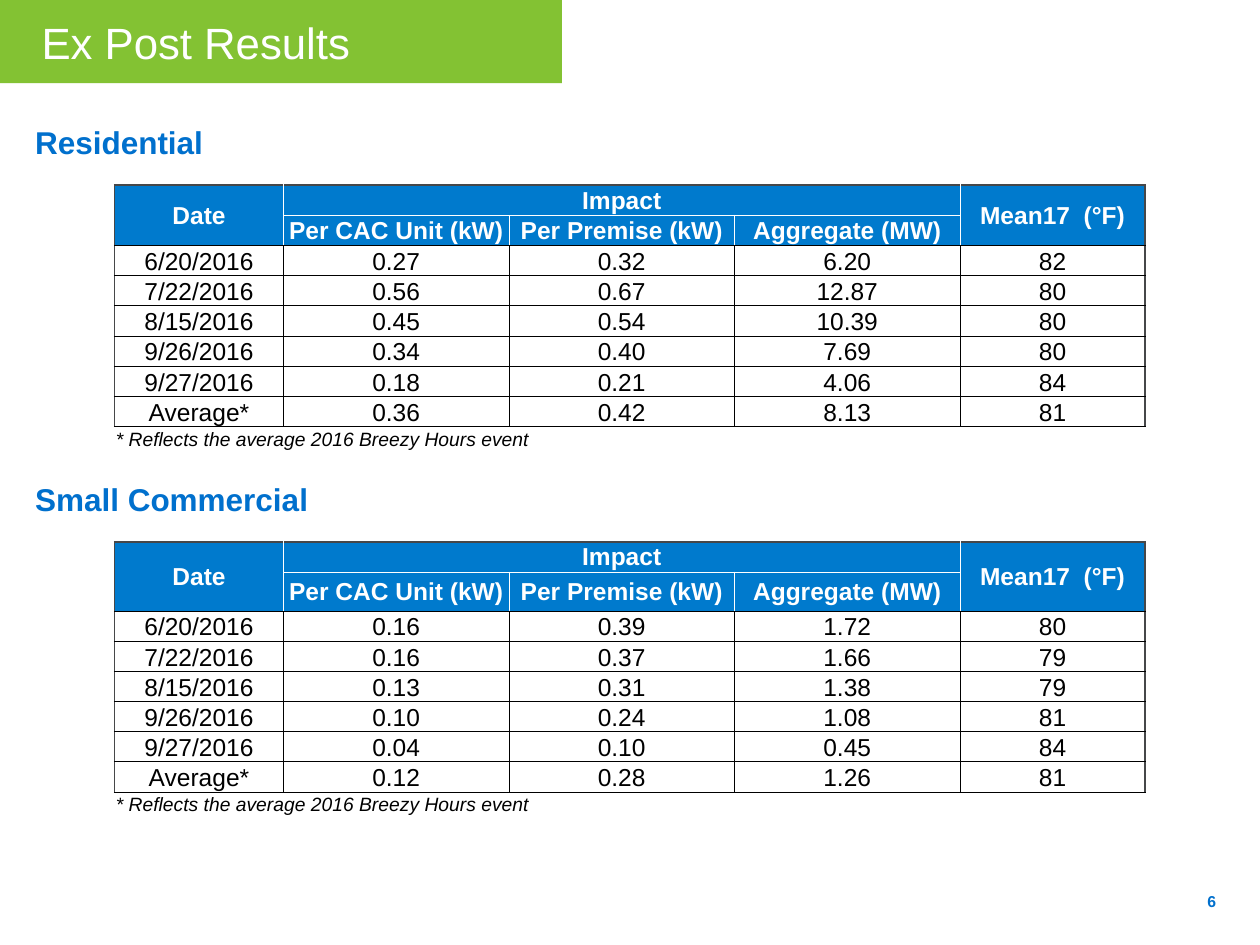
from lxml import etree
from pptx import Presentation
from pptx.dml.color import RGBColor
from pptx.enum.shapes import MSO_SHAPE
from pptx.enum.text import MSO_ANCHOR, PP_ALIGN
from pptx.oxml.ns import qn
from pptx.util import Inches, Pt

RECTANGLE = MSO_SHAPE.RECTANGLE
TOP, MIDDLE, BOTTOM = MSO_ANCHOR.TOP, MSO_ANCHOR.MIDDLE, MSO_ANCHOR.BOTTOM
LEFT, CENTER, RIGHT = PP_ALIGN.LEFT, PP_ALIGN.CENTER, PP_ALIGN.RIGHT

GREEN = RGBColor(0x77, 0xBC, 0x1F)
HEADING_BLUE = RGBColor(0x00, 0x70, 0xCD)
HEADER_BLUE = RGBColor(0x00, 0x7A, 0xCD)
GREY = RGBColor(0x46, 0x47, 0x49)
WHITE = RGBColor(0xFF, 0xFF, 0xFF)
BLACK = RGBColor(0x00, 0x00, 0x00)

# Cell borders: colour and width in points
OUTER, LIGHT, DARK = (GREY, 1), (WHITE, 0.5), (BLACK, 0.5)

COLUMN_WIDTHS = [1.34, 1.79, 1.79, 1.79, 1.47]
ROW_HEIGHT = 0.19
HEADER_ROWS = [
    ["Date", "Impact", "", "", "Mean17  (°F)"],
    ["", "Per CAC Unit (kW)", "Per Premise (kW)", "Aggregate (MW)", ""],
]
DATES = ["6/20/2016", "7/22/2016", "8/15/2016", "9/26/2016", "9/27/2016", "Average*"]
FOOTNOTE = "* Reflects the average 2016 Breezy Hours event"

RESIDENTIAL = [
    ["0.27", "0.32", "6.20", "82"],
    ["0.56", "0.67", "12.87", "80"],
    ["0.45", "0.54", "10.39", "80"],
    ["0.34", "0.40", "7.69", "80"],
    ["0.18", "0.21", "4.06", "84"],
    ["0.36", "0.42", "8.13", "81"],
]
SMALL_COMMERCIAL = [
    ["0.16", "0.39", "1.72", "80"],
    ["0.16", "0.37", "1.66", "79"],
    ["0.13", "0.31", "1.38", "79"],
    ["0.10", "0.24", "1.08", "81"],
    ["0.04", "0.10", "0.45", "84"],
    ["0.12", "0.28", "1.26", "81"],
]


def write_text(frame, text, size=14, color=BLACK, bold=False, italic=False, align=LEFT):
    paragraph = frame.paragraphs[0]
    paragraph.alignment = align
    run = paragraph.add_run()
    run.text = text
    font = run.font
    font.name, font.size = "Arial", Pt(size)
    font.bold, font.italic = bold, italic
    font.color.rgb = color


def set_borders(cell, **sides):
    """Draw the L, R, T and B borders; a side left out has no line."""
    properties = cell._tc.get_or_add_tcPr()
    for side in "LRTB":
        line = etree.SubElement(properties, qn(f"a:ln{side}"))
        if side in sides:
            color, width = sides[side]
            line.set("w", str(Pt(width)))
            fill = etree.SubElement(line, qn("a:solidFill"))
            etree.SubElement(fill, qn("a:srgbClr"), val=str(color))
        else:
            etree.SubElement(line, qn("a:noFill"))


class ReportSlide:
    def __init__(self, slide):
        self.slide = slide

    def banner(self, text, left, top, width, height):
        box = self.slide.shapes.add_shape(
            RECTANGLE, Inches(left), Inches(top), Inches(width), Inches(height))
        box.shadow.inherit = False
        box.line.fill.background()
        box.fill.solid()
        box.fill.fore_color.rgb = GREEN
        color = box._element.spPr.find(qn("a:solidFill")).find(qn("a:srgbClr"))
        etree.SubElement(color, qn("a:alpha"), val="91000")
        frame = box.text_frame
        frame.margin_left, frame.margin_right = Inches(0.35), Inches(0.18)
        frame.vertical_anchor = MIDDLE
        write_text(frame, text, size=25, color=WHITE)

    def label(self, text, left, top, width, height, anchor=TOP, **style):
        box = self.slide.shapes.add_textbox(
            Inches(left), Inches(top), Inches(width), Inches(height))
        frame = box.text_frame
        frame.word_wrap = True
        frame.vertical_anchor = anchor
        write_text(frame, text, color=HEADING_BLUE, bold=True, **style)

    def cell(self, cell, text, anchor, fill=None, borders=None, **style):
        cell.margin_left = cell.margin_right = Inches(0.01)
        cell.margin_top = Pt(0.4)
        cell.margin_bottom = 0
        cell.vertical_anchor = anchor
        set_borders(cell, **(borders or {}))
        if fill is None:
            cell.fill.background()
        else:
            cell.fill.solid()
            cell.fill.fore_color.rgb = fill
        if text:
            write_text(cell.text_frame, text, **style)

    def results_table(self, values, left, top, subheader_height=ROW_HEIGHT):
        rows = HEADER_ROWS + [[date, *row] for date, row in zip(DATES, values)]
        note_row, last = len(rows), len(COLUMN_WIDTHS) - 1
        heights = [ROW_HEIGHT] * (note_row + 1)
        heights[1] = subheader_height
        graphic = self.slide.shapes.add_table(
            note_row + 1, last + 1, Inches(left), Inches(top),
            Inches(sum(COLUMN_WIDTHS)), Inches(sum(heights)))
        table = graphic.table
        table.first_row = table.horz_banding = False
        for column, width in zip(table.columns, COLUMN_WIDTHS):
            column.width = Inches(width)
        for row, height in zip(table.rows, heights):
            row.height = Inches(height)

        # Spans: date, impact, temperature and footnote
        table.cell(0, 0).merge(table.cell(1, 0))
        table.cell(0, 1).merge(table.cell(0, last - 1))
        table.cell(0, last).merge(table.cell(1, last))
        table.cell(note_row, 0).merge(table.cell(note_row, last))

        # Header and values
        for r, row in enumerate(rows):
            header = r < len(HEADER_ROWS)
            inner = LIGHT if header else DARK
            for c, text in enumerate(row):
                borders = {
                    "L": OUTER if c == 0 else inner,
                    "R": OUTER if c == last else inner,
                    "T": OUTER if r == 0 else inner,
                    "B": LIGHT if r == 0 and 0 < c < last else DARK,
                }
                self.cell(table.cell(r, c), text, MIDDLE if header else BOTTOM,
                          fill=HEADER_BLUE if header else None, borders=borders,
                          color=WHITE if header else BLACK, bold=header, align=CENTER)

        # Footnote
        for c in range(last + 1):
            self.cell(table.cell(note_row, c), "" if c else FOOTNOTE, BOTTOM,
                      borders={"T": DARK}, size=11, italic=True)


def main():
    deck = Presentation()
    deck.slide_width, deck.slide_height = Inches(10), Inches(7.5)
    report = ReportSlide(deck.slides.add_slide(deck.slide_layouts[6]))

    # Page number and title
    report.label("6", 9.12, 6.95, 0.63, 0.4, anchor=MIDDLE, size=9, align=RIGHT)
    report.banner("Ex Post Results", -0.02, 0, 4.48, 0.66)

    # Residential results
    report.label("Residential", 0.18, 0.93, 7.79, 0.45, size=18)
    report.results_table(RESIDENTIAL, 0.91, 1.47)

    # Small commercial results
    report.label("Small Commercial", 0.18, 3.76, 7.79, 0.45, size=18)
    report.results_table(SMALL_COMMERCIAL, 0.91, 4.3, subheader_height=0.31)

    deck.save("out.pptx")


if __name__ == "__main__":
    main()
